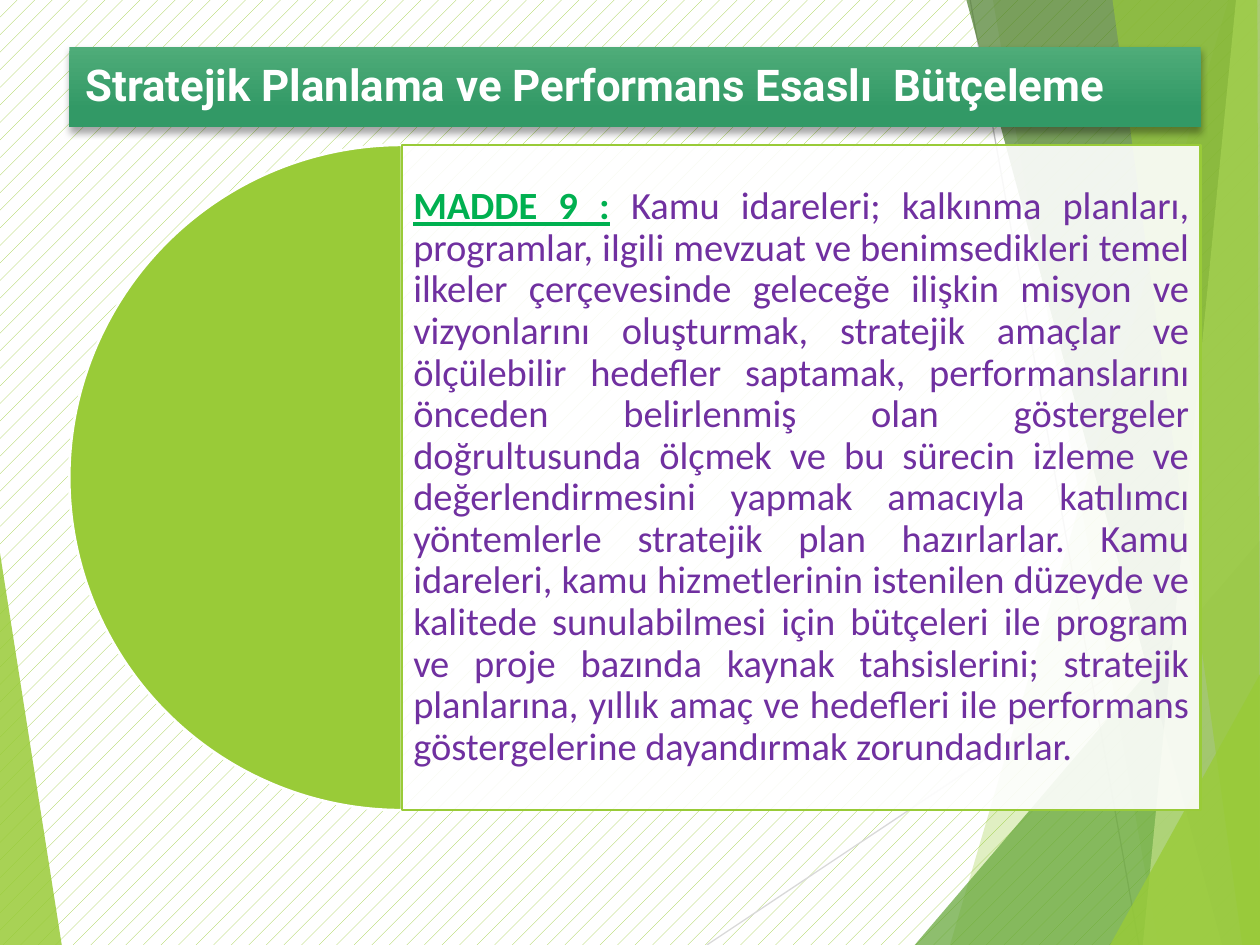
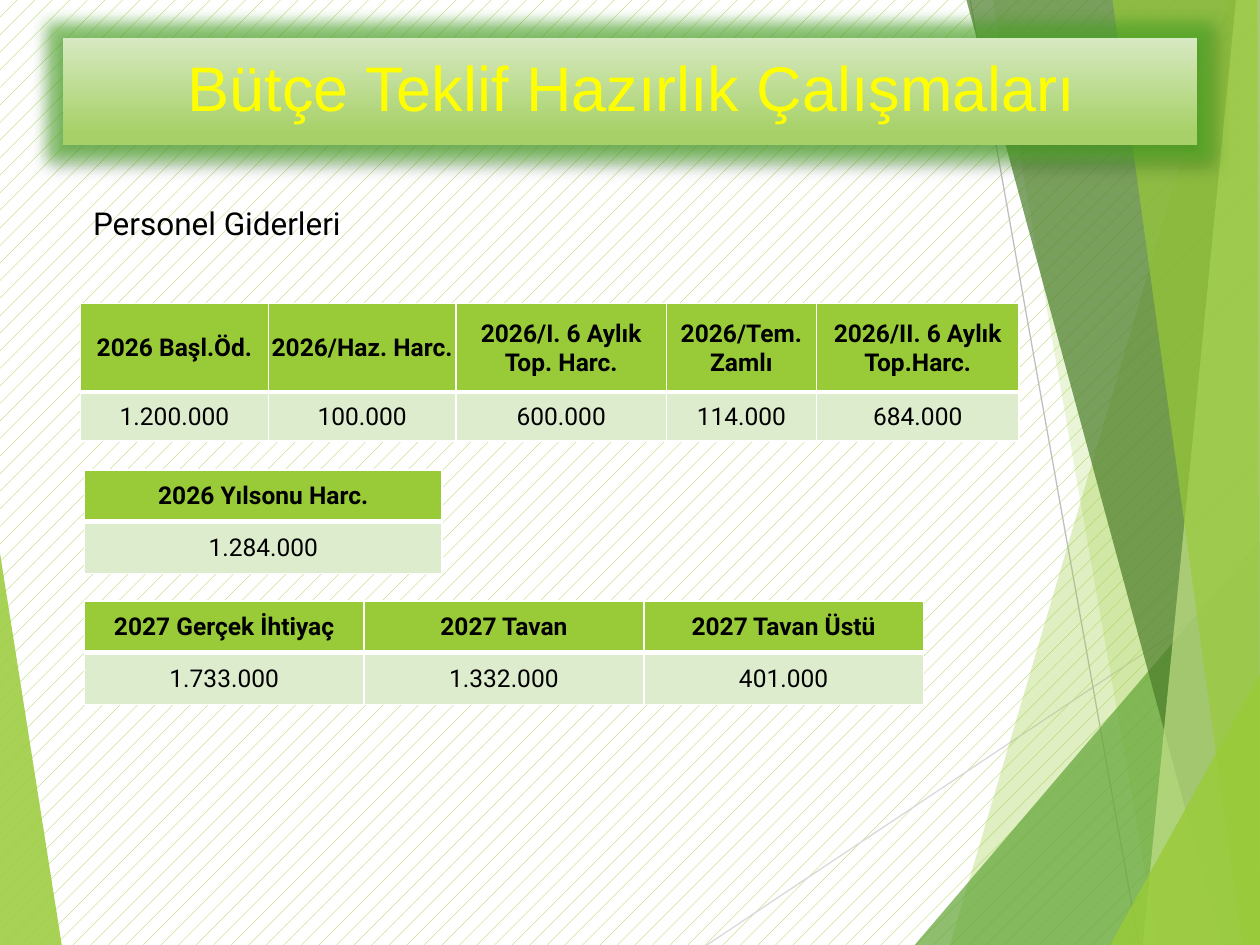
from lxml import etree
from pptx import Presentation
from pptx.dml.color import RGBColor
from pptx.enum import dml, shapes, text
from pptx.oxml import parse_xml
from pptx.oxml.ns import nsdecls, qn
from pptx.util import Inches, Pt

LIME, WHITE, BLACK, PALE = "99CB38", "FFFFFF", "000000", "DEECCE"
LEFT, CENTER, JUSTIFY = (text.PP_ALIGN.LEFT, text.PP_ALIGN.CENTER,
                         text.PP_ALIGN.JUSTIFY)
MIDDLE = text.MSO_ANCHOR.MIDDLE

# Backdrop facets, back to front: colour, opacity in percent, corners
FACETS = [
    (LIME, 85, [(0, 4.39), (0.49, 7.5), (0, 7.5)]),
    (LIME, 30, [(9.75, 0), (7.54, 7.5), (10, 7.5), (10, 0)]),
    (LIME, 20, [(7.88, 0), (9.19, 7.5), (10, 7.5), (10, 0)]),
    ("63A537", 72, [(7.26, 7.5), (10, 4.29), (10, 7.5)]),
    ("4A7C29", 70, [(7.67, 0), (9.7, 7.5), (10, 7.5), (10, 0)]),
    ("C2E088", 70, [(9.81, 0), (9.07, 7.5), (10, 7.5), (10, 0)]),
    (LIME, 65, [(8.83, 0), (9.86, 7.5), (10, 7.5), (9.98, 0)]),
    (LIME, 80, [(8.81, 7.5), (10, 5.35), (10, 7.5)]),
]
RAYS = [("D9D9D9", 5.61, 7.5, 10, 4.57), ("BFBFBF", 7.7, 0, 9.04, 7.5)]

ARTICLE = (
    "Kamu idareleri; kalkınma planları, programlar, ilgili mevzuat ve "
    "benimsedikleri temel ilkeler çerçevesinde geleceğe ilişkin misyon ve "
    "vizyonlarını oluşturmak, stratejik amaçlar ve ölçülebilir hedefler "
    "saptamak, performanslarını önceden belirlenmiş olan göstergeler "
    "doğrultusunda ölçmek ve bu sürecin izleme ve değerlendirmesini yapmak "
    "amacıyla katılımcı yöntemlerle stratejik plan hazırlarlar. Kamu "
    "idareleri, kamu hizmetlerinin istenilen düzeyde ve kalitede "
    "sunulabilmesi için bütçeleri ile program ve proje bazında kaynak "
    "tahsislerini; stratejik planlarına, yıllık amaç ve hedefleri ile "
    "performans göstergelerine dayandırmak zorundadırlar.")

# Left, top, column widths, row heights, headings, amounts
TABLES = [
    (0.64, 2.41, [1.49, 1.49, 1.67, 1.19, 1.61], [0.7, 0.39],
     ["2026 Başl.Öd.", "2026/Haz. Harc.", "2026/I. 6 Aylık Top. Harc.",
      "2026/Tem. Zamlı", "2026/II. 6 Aylık Top.Harc."],
     ["1.200.000", "100.000", "600.000", "114.000", "684.000"]),
    (0.67, 3.73, [2.84], [0.41] * 2, ["2026 Yılsonu Harc."], ["1.284.000"]),
    (0.67, 4.77, [2.22] * 3, [0.41] * 2,
     ["2027 Gerçek İhtiyaç", "2027 Tavan", "2027 Tavan Üstü"],
     ["1.733.000", "1.332.000", "401.000"]),
]


def rgb(color):
    return RGBColor.from_string(color)


def box(*lengths):
    return [Inches(v) for v in lengths]


def set_all(obj, **values):
    for name, value in values.items():
        setattr(obj, name, value)


def paint(s, color, alpha=100, line=None):
    """Solid fill with optional transparency, and an optional 1.5 pt line."""
    s.shadow.inherit = False
    s.fill.solid()
    s.fill.fore_color.rgb = rgb(color)
    if alpha < 100:
        clr = s.fill._xPr.find(".//" + qn("a:srgbClr"))
        etree.SubElement(clr, qn("a:alpha"), val=str(alpha * 1000))
    if line:
        s.line.color.rgb = rgb(line)
        s.line.width = Pt(1.5)
    else:
        s.line.fill.background()


def set_frame(tf, margins, **values):
    sides = ("margin_left", "margin_top", "margin_right", "margin_bottom")
    set_all(tf, word_wrap=True, auto_size=text.MSO_AUTO_SIZE.NONE,
            **dict(zip(sides, box(*margins))), **values)


def add_run(p, words, color, **values):
    r = p.add_run()
    r.text = words
    r.font.color.rgb = rgb(color)
    set_all(r.font, **values)


# Backdrop shared by all slides
def add_backdrop(prs, s_draw):
    master = prs.slide_master
    fill = master.background.fill
    fill.patterned()
    fill.pattern = dml.MSO_PATTERN.PERCENT_5
    fill.fore_color.rgb, fill.back_color.rgb = rgb(LIME), rgb(WHITE)

    group = s_draw.shapes.add_group_shape()
    for i, (color, alpha, corners) in enumerate(FACETS):
        start, *rest = [box(*corner) for corner in corners]
        builder = group.shapes.build_freeform(*start)
        builder.add_line_segments(rest, close=True)
        paint(builder.convert_to_shape(), color, alpha)
        if i == 0:
            for ray_color, *ends in RAYS:
                ray = group.shapes.add_connector(
                    shapes.MSO_CONNECTOR.STRAIGHT, *box(*ends))
                ray.line.color.rgb = rgb(ray_color)
                ray.line.width = Pt(0.75)
                etree.SubElement(ray.element.spPr, qn("a:effectLst"))
    # Shapes can only be drawn on a slide, so move them to the master
    for number, props in enumerate(group.element.iter(qn("p:cNvPr")), 100):
        props.set("id", str(number))
    master.shapes.element.insert(2, group.element)


# Title bar
def add_title(s, bounds, words, preset, stops, shadow, align, font, glow=""):
    title = s.shapes.title
    set_all(title, **dict(zip(("left", "top", "width", "height"),
                              box(*bounds))))
    sp_pr = title.element.spPr
    sp_pr.append(parse_xml(f'<a:prstGeom {nsdecls("a")} prst="{preset}">'
                           '<a:avLst/></a:prstGeom>'))
    title.fill.gradient()
    title.fill.gradient_angle = 270
    for stop, (position, color) in zip(title.fill.gradient_stops, stops):
        stop.position = position
        stop.color.rgb = rgb(color)
    alpha, blur, dist = shadow
    sp_pr.append(parse_xml(
        f'<a:effectLst {nsdecls("a")}>{glow}<a:outerShdw '
        f'blurRad="{Pt(blur)}" dist="{Pt(dist)}" dir="5400000" '
        f'rotWithShape="0"><a:srgbClr val="{BLACK}">'
        f'<a:alpha val="{alpha * 1000}"/></a:srgbClr></a:outerShdw>'
        '</a:effectLst>'))
    set_frame(title.text_frame, (0.13, 0.05, 0.1, 0.05),
              vertical_anchor=MIDDLE)
    p = title.text_frame.paragraphs[0]
    set_all(p, alignment=align, line_spacing=0.9)
    add_run(p, words, **font)


# Half disc with the article panel beside it
def add_article(s, x, y, w, h):
    disc = s.shapes.add_shape(shapes.MSO_SHAPE.PIE, *box(x, y, h, h))
    disc.adjustments[0], disc.adjustments[1] = 54, 162
    paint(disc, LIME, line=WHITE)

    panel = s.shapes.add_shape(shapes.MSO_SHAPE.RECTANGLE,
                               *box(x + h / 2, y, w - h / 2, h))
    paint(panel, WHITE, 90, LIME)
    set_frame(panel.text_frame, [0.09] * 4, vertical_anchor=MIDDLE)
    p = panel.text_frame.paragraphs[0]
    set_all(p, alignment=JUSTIFY, line_spacing=0.9)
    font = dict(name="Calibri", size=Pt(22))
    add_run(p, "MADDE 9 :", "00B050", bold=True, underline=True, **font)
    add_run(p, " ", "00B050", **font)
    add_run(p, ARTICLE, "7030A0", **font)


# Tables
def set_borders(cell, **widths):
    tc_pr = cell._tc.get_or_add_tcPr()
    for i, (side, width) in enumerate(widths.items()):
        tc_pr.insert(i, parse_xml(
            f'<a:ln{side} {nsdecls("a")} w="{Pt(width)}"><a:solidFill>'
            f'<a:srgbClr val="{WHITE}"/></a:solidFill></a:ln{side}>'))


def add_amounts(s, x, y, widths, heights, headings, amounts):
    frame = s.shapes.add_table(2, len(widths),
                               *box(x, y, sum(widths), sum(heights)))
    table = frame.table
    for column, width in zip(table.columns, widths):
        column.width = Inches(width)
    for i, (row, height) in enumerate(zip(table.rows, heights)):
        row.height = Inches(height)
        is_head = i == 0
        for cell, words in zip(row.cells, (headings, amounts)[i]):
            cell.fill.solid()
            cell.fill.fore_color.rgb = rgb(LIME if is_head else PALE)
            set_borders(cell, L=1, R=1, T=1 if is_head else 3,
                        B=3 if is_head else 1)
            set_all(cell, vertical_anchor=MIDDLE, margin_left=Inches(0.01),
                    margin_right=Inches(0.01), margin_top=Inches(0.01),
                    margin_bottom=0)
            p = cell.text_frame.paragraphs[0]
            p.alignment = CENTER
            add_run(p, words, BLACK, name="Roboto", size=Pt(14), bold=is_head)


def add_caption(s, x, y, w, h, words):
    tf = s.shapes.add_textbox(*box(x, y, w, h)).text_frame
    set_frame(tf, (0.1, 0.05, 0.1, 0.05))
    add_run(tf.paragraphs[0], words, BLACK, name="Roboto", size=Pt(18))


# Slides
def build_article_slide(s):
    add_title(s, (0.55, 0.37, 8.98, 0.64),
              "Stratejik Planlama ve Performans Esaslı  Bütçeleme",
              "roundRect", [(0, "4FAC79"), (0.78, "329966")], (35, 4, 3), LEFT,
              dict(color=WHITE, name="Roboto", size=Pt(25), bold=True))
    add_article(s, 0.55, 1.15, 8.98, 5.28)


def build_budget_slide(s):
    glow = (f'<a:glow rad="{Inches(0.25)}"><a:srgbClr val="4EB026">'
            '<a:alpha val="60000"/></a:srgbClr></a:glow>')
    add_title(s, (0.5, 0.3, 9, 0.85), "Bütçe Teklif Hazırlık Çalışmaları",
              "rect", [(0, "D7E9C2"), (0.88, "A7D168")], (32, 3.5, 2.2),
              CENTER, dict(color="FFFF00", name="Arial", size=Pt(36)), glow)
    for table in TABLES:
        add_amounts(s, *table)
    add_caption(s, 0.64, 1.57, 4.68, 0.71, "Personel Giderleri")


def main():
    prs = Presentation()
    prs.slide_width, prs.slide_height = box(10, 7.5)
    title_only = prs.slide_layouts[5]
    article, budget = [prs.slides.add_slide(title_only) for _ in range(2)]
    add_backdrop(prs, article)
    build_article_slide(article)
    build_budget_slide(budget)
    prs.save("out.pptx")


if __name__ == "__main__":
    main()
